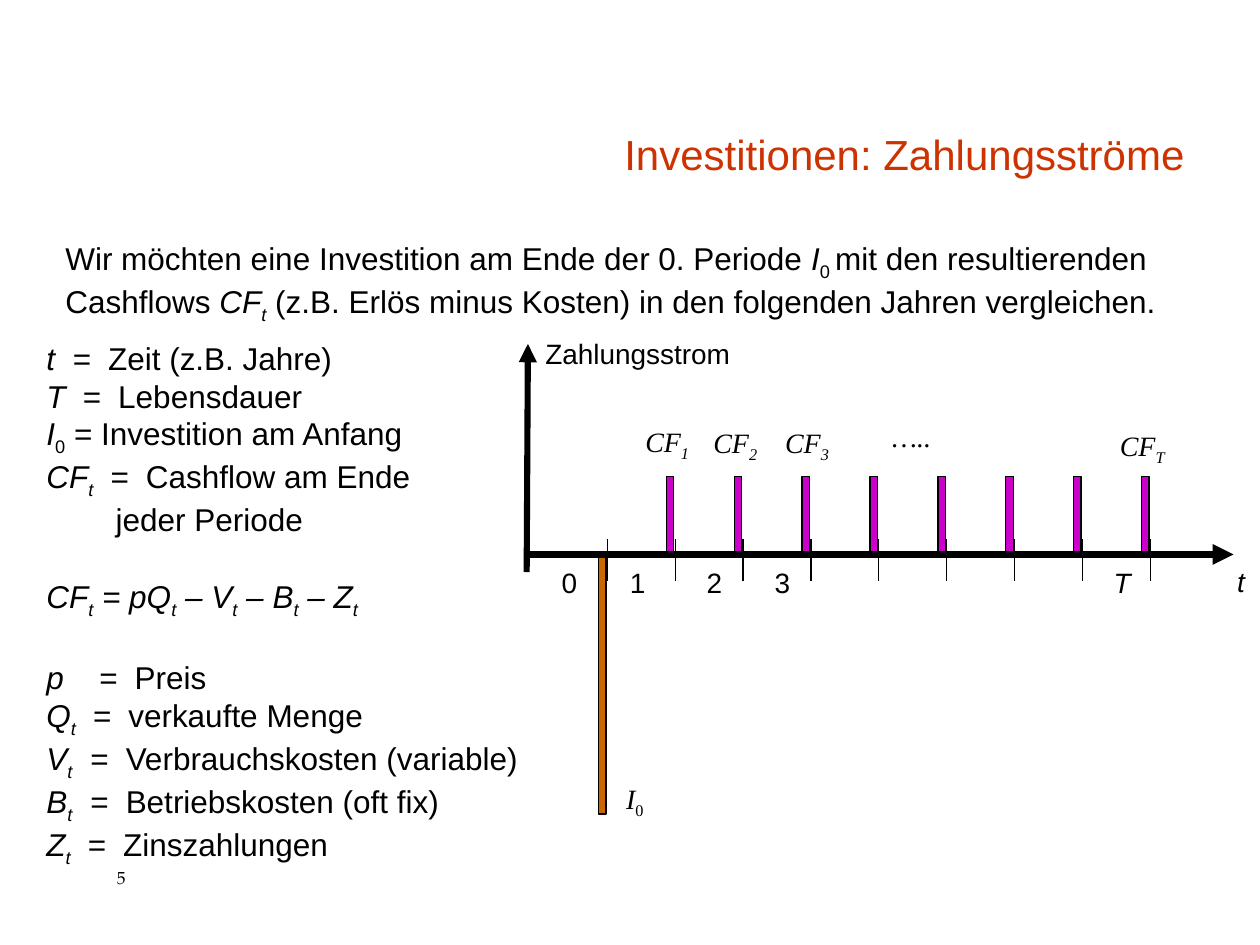
from dataclasses import dataclass

import lxml.etree
import pptx
import pptx.dml.color
import pptx.enum.shapes
import pptx.enum.text
import pptx.oxml.ns
import pptx.util

Inches = pptx.util.Inches
Pt = pptx.util.Pt
Align = pptx.enum.text.PP_ALIGN
qn = pptx.oxml.ns.qn


@dataclass(frozen=True)
class Theme:
    """Colours, fonts and type sizes of the slide."""
    black: str = "000000"
    title: str = "CC3300"
    inflow: str = "CC00CC"
    outflow: str = "CC6600"
    sans: str = "Arial"
    serif: str = "Times New Roman"
    number_font: str = "TeX Gyre Pagella"
    title_size: int = 24
    body_size: int = 18
    label_size: int = 16
    number_size: int = 10


THEME = Theme()
FIRST_TICK, LAST_TICK, PERIODS = 4.82, 9.13, 8
PITCH = (LAST_TICK - FIRST_TICK) / PERIODS
AXIS_X, AXIS_Y = 4.18, 4.4
BAR_WIDTH, BAR_OFFSET = 0.06, 0.07
VALUE_GAP = 0.28
BLOCK_GAP = 22


def rgb(value):
    """Turn a hex string into a colour."""
    return pptx.dml.color.RGBColor.from_string(value)


def add_box(page, left, top, width, height):
    """Add an empty wrapping text box and return its text frame."""
    frame = page.shapes.add_textbox(*map(Inches, (left, top, width, height))).text_frame
    frame.word_wrap = True
    frame.auto_size = pptx.enum.text.MSO_AUTO_SIZE.SHAPE_TO_FIT_TEXT
    return frame


def add_spans(para, spans, size, font=THEME.sans, color=THEME.black):
    """Add (text, style) runs, where style may hold i for italic and s for subscript."""
    for text, style in spans:
        span = para.add_run()
        span.text = text
        span.font.name = font
        span.font.size = Pt(size)
        span.font.color.rgb = rgb(color)
        span.font.italic = "i" in style
        if "s" in style:
            span._r.get_or_add_rPr().set("baseline", "-25000")


def add_label(page, place, spans, font=THEME.sans, size=THEME.label_size, align=Align.LEFT):
    """Add a text box with one paragraph."""
    para = add_box(page, *place).paragraphs[0]
    para.alignment = align
    add_spans(para, spans, size, font)


def add_title(page, text):
    """Add the right-aligned slide title."""
    frame = add_box(page, 2.09, 0.42, 7.41, 1.05)
    frame.auto_size = pptx.enum.text.MSO_AUTO_SIZE.NONE
    frame.vertical_anchor = pptx.enum.text.MSO_ANCHOR.BOTTOM
    para = frame.paragraphs[0]
    para.alignment = Align.RIGHT
    para.line_spacing = 0.9
    add_spans(para, [(text, "")], THEME.title_size, color=THEME.title)


def add_bar(page, tick, top, height, color):
    """Add a payment bar just left of a tick."""
    bar = page.shapes.add_shape(
        pptx.enum.shapes.MSO_SHAPE.RECTANGLE,
        *map(Inches, (tick - BAR_OFFSET, top, BAR_WIDTH, height)))
    bar.shadow.inherit = False
    bar.fill.solid()
    bar.fill.fore_color.rgb = rgb(color)
    bar.line.color.rgb = rgb(THEME.black)
    bar.line.width = Pt(0.75)


def add_line(page, start, end, weight, arrow=False):
    """Add a straight black line, with an arrowhead at its end if wanted."""
    line = page.shapes.add_connector(
        pptx.enum.shapes.MSO_CONNECTOR.STRAIGHT, *map(Inches, (*start, *end)))
    line.line.color.rgb = rgb(THEME.black)
    line.line.width = Pt(weight)
    if arrow:
        lxml.etree.SubElement(line.line._get_or_add_ln(), qn("a:tailEnd"), type="triangle")
    lxml.etree.SubElement(line._element.spPr, qn("a:effectLst"))


def add_tabs(para, stops):
    """Set left tab stops on a paragraph."""
    tabs = lxml.etree.SubElement(para._p.get_or_add_pPr(), qn("a:tabLst"))
    for stop in stops:
        lxml.etree.SubElement(tabs, qn("a:tab"), pos=str(Inches(stop)), algn="l")


def add_definitions(page):
    """Add the column of symbols and the cash flow formula."""
    formula = [("CF", "i"), ("t", "is")]
    for sign, symbol in zip("=–––", ("pQ", "V", "B", "Z")):
        formula += [(f" {sign} {symbol}", "i"), ("t", "is")]

    def definition(symbol, subscript, stop, meaning, gap=0):
        """Describe one symbol line as runs, tab stops, indent and space before."""
        spans = [(symbol, "i")] + ([(subscript, "is")] if subscript else [])
        return spans + [(f"\t=\t{meaning}", "")], (stop, stop + VALUE_GAP), 0, gap

    rows = [
        definition("t", "", 0.21, "Zeit (z.B. Jahre)"),
        definition("T", "", 0.29, "Lebensdauer"),
        ([("I", "i"), ("0", "s"), (" = Investition am Anfang", "")], (), 0, 0),
        definition("CF", "t", 0.51, "Cashflow am Ende"),
        ([("jeder Periode", "")], (), 0.55, 0),
        (formula, (), 0, BLOCK_GAP),
        definition("p", "", 0.42, "Preis", BLOCK_GAP),
        definition("Q", "t", 0.37, "verkaufte Menge"),
        definition("V", "t", 0.35, "Verbrauchskosten (variable)"),
        definition("B", "t", 0.35, "Betriebskosten (oft fix)"),
        definition("Z", "t", 0.33, "Zinszahlungen"),
    ]
    frame = add_box(page, 0.27, 2.64, 4.03, 4.28)
    for index, (spans, stops, indent, gap) in enumerate(rows):
        para = frame.add_paragraph() if index else frame.paragraphs[0]
        if indent:
            para._p.get_or_add_pPr().set("marL", str(Inches(indent)))
        if stops:
            add_tabs(para, stops)
        if gap:
            para.space_before = Pt(gap)
        add_spans(para, spans, THEME.body_size)


def add_chart_marks(page):
    """Draw the payment bars, the ticks and both axes."""
    ticks = [FIRST_TICK + PITCH * period for period in range(PERIODS + 1)]
    add_bar(page, ticks[0], 4.38, 2.08, THEME.outflow)
    for tick in ticks[1:]:
        add_bar(page, tick, 3.78, 0.62, THEME.inflow)
    for tick in ticks:
        add_line(page, (tick, 4.28), (tick, 4.61), 0.75)
    add_line(page, (AXIS_X, AXIS_Y), (9.79, AXIS_Y), 4, arrow=True)
    add_line(page, (AXIS_X, 4.54), (AXIS_X + 0.01, 2.73), 3.5, arrow=True)


def add_chart_labels(page):
    """Name the periods, the cash flows, the investment and the axes."""
    for text, left in (("0", 4.36), ("1", 4.9), ("2", 5.51), ("3", 6.05)):
        add_label(page, (left, 4.44, 0.31, 0.36), [(text, "")])
    add_label(page, (8.74, 4.44, 0.43, 0.36), [("T", "i")])
    add_label(page, (9.72, 4.43, 0.28, 0.36), [("t", "i")])
    for period, left, top in (("1", 4.99, 3.32), ("2", 5.53, 3.33),
                              ("3", 6.1, 3.33), ("T", 8.76, 3.35)):
        add_label(page, (left, top, 0.61, 0.4), [("CF", "i"), (period, "is")],
                  THEME.serif, align=Align.CENTER)
    add_label(page, (6.93, 3.28, 0.61, 0.36), [("…..", "i")], THEME.serif, align=Align.CENTER)
    add_label(page, (4.87, 6.15, 0.52, 0.4), [("I", "i"), ("0", "s")], THEME.serif)
    add_label(page, (4.23, 2.62, 2.4, 0.36), [("Zahlungsstrom", "")])


def main():
    """Build and save the slide."""
    deck = pptx.Presentation()
    deck.slide_width, deck.slide_height = Inches(10), Inches(7.5)
    page = deck.slides.add_slide(deck.slide_layouts[6])
    add_label(page, (0.83, 6.83, 0.67, 0.29), [("5", "")], THEME.number_font, THEME.number_size)
    add_title(page, "Investitionen: Zahlungsströme")
    add_chart_marks(page)
    add_definitions(page)
    add_chart_labels(page)
    add_label(page, (0.42, 1.85, 8.95, 0.78), [
        ("Wir möchten eine Investition am Ende der 0. Periode ", ""),
        ("I", "i"), ("0 ", "s"), ("mit den resultierenden Cashflows ", ""),
        ("CF", "i"), ("t", "is"),
        (" (z.B. Erlös minus Kosten) in den folgenden Jahren vergleichen.", ""),
    ], size=THEME.body_size)
    deck.save("out.pptx")


if __name__ == "__main__":
    main()
